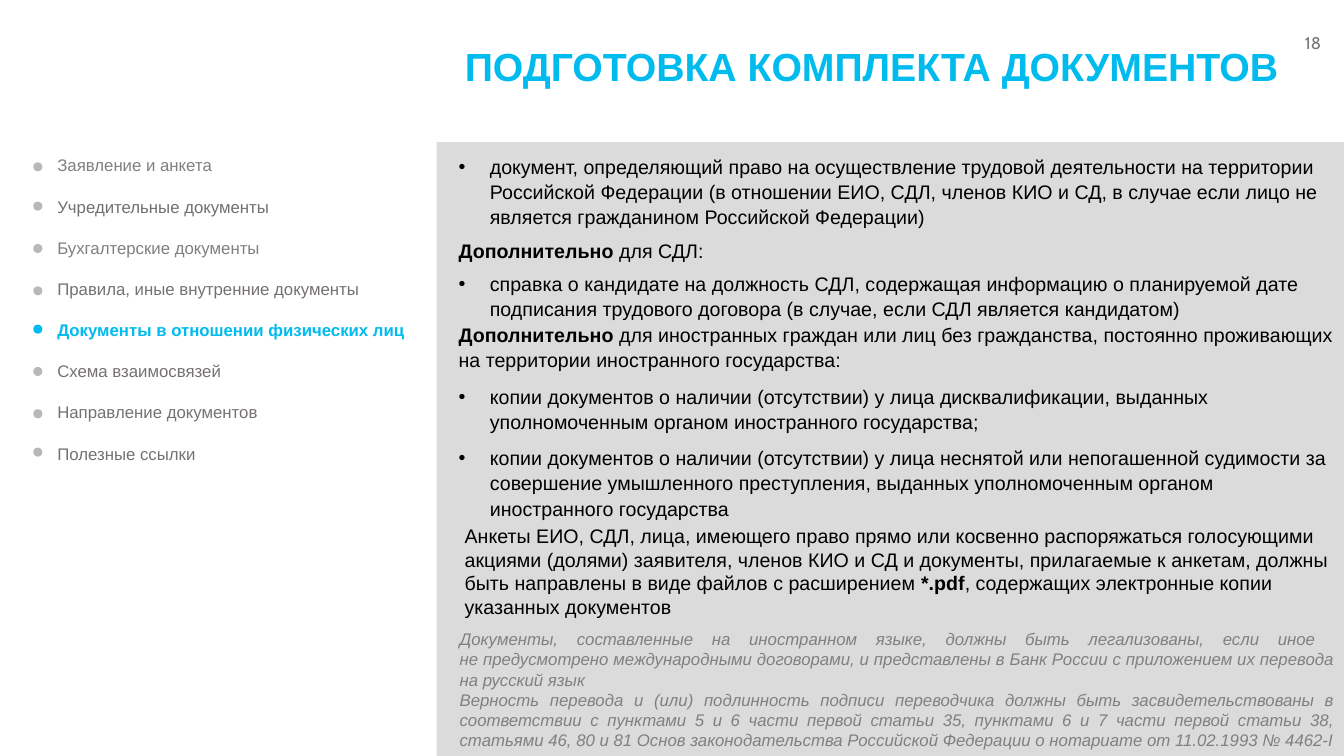
from lxml import etree
from pptx import Presentation
from pptx.dml.color import RGBColor
from pptx.enum.shapes import MSO_SHAPE
from pptx.enum.text import MSO_ANCHOR, MSO_AUTO_SIZE, PP_ALIGN
from pptx.oxml.ns import qn
from pptx.util import Emu, Pt

RECT, OVAL = MSO_SHAPE.RECTANGLE, MSO_SHAPE.OVAL
LEFT, RIGHT, JUSTIFY = PP_ALIGN.LEFT, PP_ALIGN.RIGHT, PP_ALIGN.JUSTIFY
BLACK = RGBColor(0x00, 0x00, 0x00)
CYAN = RGBColor(0x00, 0xBB, 0xEE)
PANEL_GREY = RGBColor(0xDB, 0xDB, 0xDC)
DOT_GREY = RGBColor(0xB7, 0xB8, 0xB9)
NOTE_GREY = RGBColor(0x80, 0x80, 0x80)
MENU_GREY = RGBColor(0x76, 0x71, 0x71)
CHARTER_GREY = RGBColor(0x6F, 0x71, 0x71)
PAGE_GREY = RGBColor(0x74, 0x77, 0x7B)
PX = 9144
ACTIVE_SECTION = "Документы в отношении физических лиц"
EXTRA = "Дополнительно"
BOLD_TEXTS = (ACTIVE_SECTION, EXTRA, "*.pdf")

prs = Presentation()
prs.slide_width, prs.slide_height = Emu(1333 * PX), Emu(750 * PX)
slide = prs.slides.add_slide(prs.slide_layouts[5])


def add_text(box, paragraphs, size, colour, align=LEFT, font="Arial"):
    left, top, width, height = (Emu(v * PX) for v in box)
    frame = slide.shapes.add_textbox(left, top, width, height).text_frame
    frame.word_wrap = True
    for index, parts in enumerate(paragraphs):
        paragraph = frame.add_paragraph() if index else frame.paragraphs[0]
        paragraph.text = parts[0]
        for part in parts[1:]:
            paragraph.add_run().text = part
        paragraph.alignment = align
        for run in paragraph.runs:
            run.font.name = font
            run.font.size = Pt(size)
            run.font.color.rgb = colour
            run.font.bold = run.text in BOLD_TEXTS
    return frame.paragraphs


def add_filled(kind, box, colour):
    shape = slide.shapes.add_shape(kind, *(Emu(v * PX) for v in box))
    shape.shadow.inherit = False
    shape.fill.solid()
    shape.fill.fore_color.rgb = colour
    shape.line.fill.background()


add_text((1078, 28, 242, 30), [["18"]], 12, PAGE_GREY, RIGHT, "Cabin")
add_filled(RECT, (433, 141, 900, 609), PANEL_GREY)

title = slide.shapes.title
title.left, title.top = Emu(451 * PX), Emu(18 * PX)
title.width, title.height = Emu(1150 * PX), Emu(101 * PX)
title.text_frame.text = "ПОДГОТОВКА КОМПЛЕКТА ДОКУМЕНТОВ"
title.text_frame.auto_size = MSO_AUTO_SIZE.NONE
title.text_frame.vertical_anchor = MSO_ANCHOR.MIDDLE
heading = title.text_frame.paragraphs[0]
heading.alignment = LEFT
heading.line_spacing = 0.9
heading_font = heading.runs[0].font
heading_font.name, heading_font.size, heading_font.bold = "Arial", Pt(28), True
heading_font.color.rgb = CYAN

officer_documents = add_text((433, 147, 901, 176), [
    ["документ, определяющий право на осуществление трудовой деятельности на территории Российской Федерации (в отношении ЕИО, СДЛ, членов КИО и СД, в случае если лицо не является гражданином Российской Федерации)"],
    [EXTRA, " для СДЛ:"],
    ["справка о кандидате на должность СДЛ, содержащая информацию о планируемой дате подписания трудового договора (в случае, если СДЛ является кандидатом)"],
], 14, BLACK)

add_text((451, 515, 888, 104), [[
    "Анкеты ЕИО, СДЛ, лица, имеющего право прямо или косвенно распоряжаться голосующими акциями (долями) заявителя, членов КИО и СД и документы, прилагаемые к анкетам, должны быть направлены в виде файлов с расширением ",
    "*.pdf",
    ", содержащих электронные копии указанных документов",
]], 14, BLACK)

foreign_documents = add_text((433, 314, 901, 207), [
    [EXTRA, " для иностранных граждан или лиц без гражданства, постоянно проживающих на территории иностранного государства:"],
    ["копии документов о наличии (отсутствии) у лица дисквалификации, выданных уполномоченным органом иностранного государства;"],
    ["копии документов о наличии (отсутствии) у лица неснятой или непогашенной судимости за совершение умышленного преступления, выданных уполномоченным органом иностранного государства"],
], 14, BLACK)

for paragraphs, gaps in ((officer_documents, (6, 6, 6)), (foreign_documents, (8, 8, 10))):
    for paragraph, gap in zip(paragraphs, gaps):
        paragraph.line_spacing = 1.07
        paragraph.space_after = Pt(gap)
        properties = paragraph._p.get_or_add_pPr()
        if paragraph.text.startswith(EXTRA):
            properties.set("marL", str(12 * PX))
            properties.set("indent", "0")
        else:
            properties.set("marL", str(43 * PX))
            properties.set("indent", str(-31 * PX))
            etree.SubElement(properties, qn("a:buFont")).set("typeface", "Arial")
            etree.SubElement(properties, qn("a:buChar")).set("char", "•")

sections = [
    ("Заявление и анкета", NOTE_GREY, 161),
    ("Учредительные документы", CHARTER_GREY, 200),
    ("Бухгалтерские документы", NOTE_GREY, 242),
    ("Правила, иные внутренние документы", MENU_GREY, 284),
    (ACTIVE_SECTION, CYAN, 322),
    ("Схема взаимосвязей", MENU_GREY, 364),
    ("Направление документов", MENU_GREY, 406),
    ("Полезные ссылки", MENU_GREY, 444),
]
menu = add_text((47, 149, 369, 319), [[name] for name, _, _ in sections], 12, MENU_GREY)
for entry, (name, colour, dot_top) in zip(menu, sections):
    entry.space_after = Pt(15)
    entry.runs[0].font.color.rgb = colour
    add_filled(OVAL, (33, dot_top, 9, 9), CYAN if name == ACTIVE_SECTION else DOT_GREY)

notes = add_text((446, 619, 888, 131), [
    ["Документы, составленные на иностранном языке, должны быть легализованы, если иное \vне предусмотрено международными договорами, и представлены в Банк России с приложением их перевода на русский язык"],
    ["Верность перевода и (или) подлинность подписи переводчика должны быть засвидетельствованы в соответствии с пунктами 5 и 6 части первой статьи 35, пунктами 6 и 7 части первой статьи 38, статьями 46, 80 и 81 Основ законодательства Российской Федерации о нотариате от 11.02.1993 № 4462-I"],
], 12, NOTE_GREY, JUSTIFY)
for note in notes:
    for run in note.runs:
        run.font.italic = True

prs.save("out.pptx")
